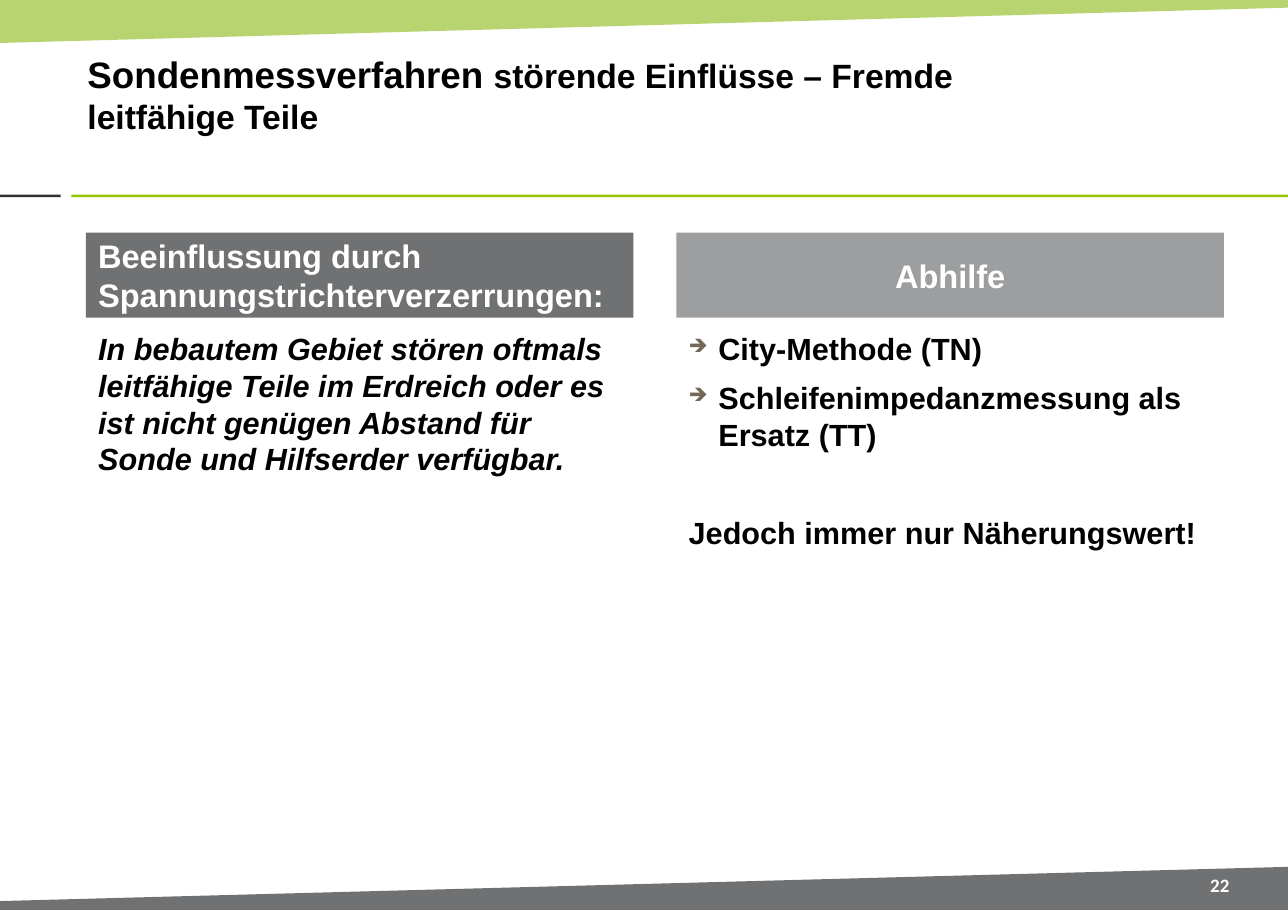
from pptx import Presentation
from pptx import util as u
from pptx.dml.color import RGBColor
from pptx.enum import shapes, text
from pptx.oxml import parse_xml
from pptx.oxml.ns import nsdecls

Pt = u.Pt
COLORS = {
    "band": "95C02A", "green": "94C600", "dark": "313130", "grey": "707173",
    "light": "9C9E9F", "bullet": "71685A", "black": "000000", "white": "FFFFFF",
}
WIDTH, HEIGHT = 841.68, 595.44
COLUMN_LEFTS, COLUMN_WIDTH = (56.2, 442.1), 357.8
INDENT = 19.4

deck = Presentation()
deck.slide_width, deck.slide_height = Pt(WIDTH), Pt(HEIGHT)
page = deck.slides.add_slide(deck.slide_layouts[6])


def paint(shape, color):
    shape.shadow.inherit = False
    shape.fill.solid()
    shape.fill.fore_color.rgb = RGBColor.from_string(COLORS[color])
    shape.line.fill.background()


def write(box, paragraphs, color="black", font="Arial", italic=False,
          align=text.PP_ALIGN.LEFT, anchor=text.MSO_ANCHOR.MIDDLE):
    """Each paragraph is (space before, bulleted, [(text, size), ...])."""
    frame = box.text_frame
    frame.word_wrap = True
    frame.vertical_anchor = anchor
    frame.margin_left = frame.margin_right = Pt(8)
    frame.margin_top = frame.margin_bottom = Pt(4)
    for index, (space, bulleted, runs) in enumerate(paragraphs):
        para = frame.add_paragraph() if index else frame.paragraphs[0]
        para.alignment = align
        para.space_before = Pt(space)
        if bulleted:
            props = para._p.get_or_add_pPr()
            props.set("marL", str(Pt(INDENT)))
            props.set("indent", str(-Pt(INDENT)))
            for element in (f'<a:buClr {nsdecls("a")}><a:srgbClr val="{COLORS["bullet"]}"/></a:buClr>',
                            f'<a:buSzPct {nsdecls("a")} val="60000"/>',
                            f'<a:buChar {nsdecls("a")} char="➔"/>'):
                props.append(parse_xml(element))
        for words, size in runs:
            span = para.add_run()
            span.text = words
            span.font.name, span.font.size = font, Pt(size)
            span.font.bold, span.font.italic = True, italic
            span.font.color.rgb = RGBColor.from_string(COLORS[color])


# Slanted bands at top and bottom
bands = [
    ("band", [(0, 0), (WIDTH, 0), (WIDTH, 5), (0, 28.1)]),
    ("grey", [(0, 594.7), (0, 589), (WIDTH, 566.6), (WIDTH, 594.7)]),
]
for color, corners in bands:
    points = [(Pt(x), Pt(y)) for x, y in corners]
    builder = page.shapes.build_freeform(*points[0])
    builder.add_line_segments(points[1:])
    band = builder.convert_to_shape()
    paint(band, color)
    if color == "band":
        band.fill._xPr.find(".//{*}srgbClr").append(
            parse_xml(f'<a:alpha {nsdecls("a")} val="67000"/>'))

# Rule under the title
for color, left, width in (("dark", 0, 39.6), ("green", 46.6, WIDTH - 46.6)):
    rule = page.shapes.add_shape(shapes.MSO_SHAPE.RECTANGLE,
                                 Pt(left), Pt(127.3), Pt(width), Pt(1.6))
    paint(rule, color)

# Title
title = page.shapes.add_textbox(Pt(49.2), Pt(23.8), Pt(667.4), Pt(75.6))
write(title, [(0, False, [("Sondenmessverfahren ", 24),
                          ("störende Einflüsse – Fremde leitfähige Teile", 22)])])

# Two columns: header bar above body text
columns = [
    ("grey", "Beeinflussung durch Spannungstrichterverzerrungen:", text.PP_ALIGN.LEFT, True,
     [(0, False, [("In bebautem Gebiet stören oftmals leitfähige Teile im Erdreich oder es "
                   "ist nicht genügen Abstand für Sonde und Hilfserder verfügbar.", 20)])]),
    ("light", "Abhilfe", text.PP_ALIGN.CENTER, False,
     [(0, True, [("City-Methode (TN)", 20)]),
      (8, True, [("Schleifenimpedanzmessung als Ersatz (TT)", 20)]),
      (40, False, [("Jedoch immer nur Näherungswert!", 20)])]),
]
for left, (color, heading, align, italic, paragraphs) in zip(COLUMN_LEFTS, columns):
    header = page.shapes.add_shape(shapes.MSO_SHAPE.RECTANGLE,
                                   Pt(left), Pt(152), Pt(COLUMN_WIDTH), Pt(55.6))
    paint(header, color)
    write(header, [(0, False, [(heading, 21.3)])], color="white", align=align)
    body = page.shapes.add_textbox(Pt(left), Pt(211.7), Pt(COLUMN_WIDTH), Pt(311))
    write(body, paragraphs, italic=italic, anchor=text.MSO_ANCHOR.TOP)

# Page number
number = page.shapes.add_textbox(Pt(772.6), Pt(568.1), Pt(49), Pt(20.9))
write(number, [(0, False, [("22", 12.4)])], color="white", font="Calibri",
      align=text.PP_ALIGN.CENTER)

deck.save("out.pptx")
